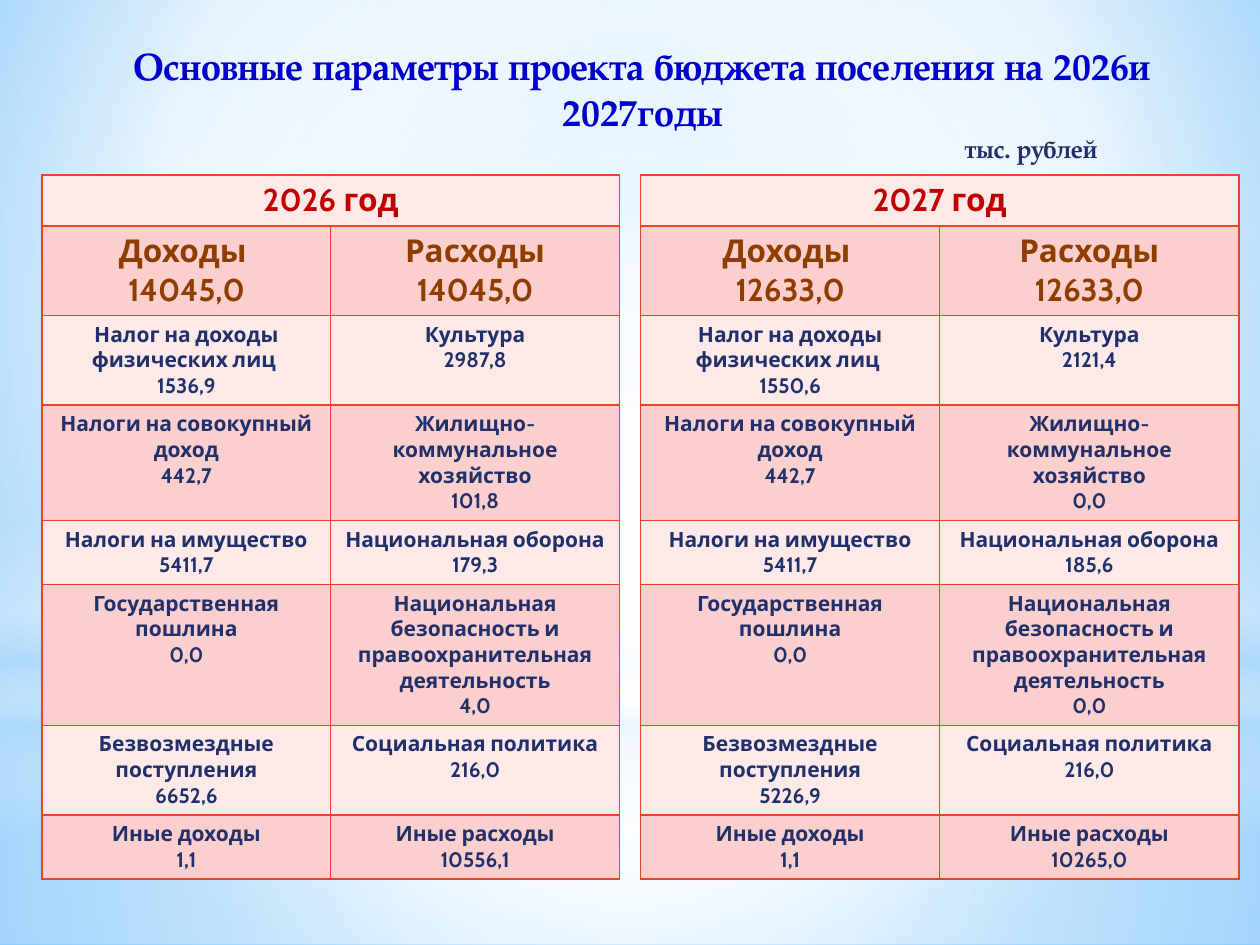
from lxml import etree
from pptx import Presentation
from pptx.dml.color import RGBColor
from pptx.enum.shapes import MSO_SHAPE
from pptx.enum.text import MSO_ANCHOR, MSO_AUTO_SIZE, PP_ALIGN
from pptx.oxml.ns import qn
from pptx.util import Pt

RECTANGLE, ELLIPSE = MSO_SHAPE.RECTANGLE, MSO_SHAPE.OVAL
CENTER, LEFT = PP_ALIGN.CENTER, PP_ALIGN.LEFT
TOP, NO_FIT = MSO_ANCHOR.TOP, MSO_AUTO_SIZE.NONE

WHITE = RGBColor(0xFF, 0xFF, 0xFF)
SKY = RGBColor(0xB4, 0xDC, 0xFA)
BACK_LIGHT = RGBColor(0x9E, 0xD5, 0xFF)
BACK_DEEP = RGBColor(0x5B, 0xB9, 0xFF)
TITLE_BLUE = RGBColor(0x00, 0x00, 0xCC)
TITLE_EDGE = RGBColor(0x44, 0x5E, 0xC3)
NAVY = RGBColor(0x21, 0x30, 0x6A)
RED = RGBColor(0xC0, 0x00, 0x00)
BROWN = RGBColor(0x90, 0x3E, 0x00)
BORDER = RGBColor(0xF1, 0x41, 0x24)
BANDS = (RGBColor(0xFC, 0xE9, 0xE8), RGBColor(0xFA, 0xCF, 0xCD))

# Budget items: income label, expense label
ITEMS = [
    ("Доходы ", "Расходы"),
    ("Налог на доходы физических лиц ", "Культура"),
    ("Налоги на совокупный доход", "Жилищно-коммунальное хозяйство"),
    ("Налоги на имущество", "Национальная оборона"),
    ("Государственная пошлина",
     "Национальная безопасность и правоохранительная деятельность"),
    ("Безвозмездные поступления", "Социальная политика"),
    ("Иные доходы", "Иные расходы"),
]
AMOUNTS_2026 = [
    ("14045,0", "14045,0"), ("1536,9", "2987,8"), ("442,7", "101,8"),
    ("5411,7", "179,3"), ("0,0", "4,0"), ("6652,6", "216,0"), ("1,1", "10556,1"),
]
AMOUNTS_2027 = [
    ("12633,0", "12633,0"), ("1550,6", "2121,4"), ("442,7", "0,0"),
    ("5411,7", "185,6"), ("0,0", "0,0"), ("5226,9", "216,0"), ("1,1", "10265,0"),
]


def solid_line(parent, tag, color, width):
    line = etree.Element(qn(tag), w=str(Pt(width)))
    fill = etree.SubElement(line, qn("a:solidFill"))
    etree.SubElement(fill, qn("a:srgbClr"), val=str(color))
    return line


def set_gradient(properties, stops, focus=None):
    """Replace a solid fill by stops of (position, colour, opacity), in percent."""
    gradient = etree.Element(qn("a:gradFill"), rotWithShape="1")
    stop_list = etree.SubElement(gradient, qn("a:gsLst"))
    for position, color, opacity in stops:
        stop = etree.SubElement(stop_list, qn("a:gs"), pos=str(position * 1000))
        tint = etree.SubElement(stop, qn("a:srgbClr"), val=str(color))
        if opacity < 100:
            etree.SubElement(tint, qn("a:alpha"), val=str(opacity * 1000))
    if focus:
        path = etree.SubElement(gradient, qn("a:path"), path="circle")
        sides = {side: str(value * 1000) for side, value in zip("ltrb", focus)}
        etree.SubElement(path, qn("a:fillToRect"), **sides)
    else:
        etree.SubElement(gradient, qn("a:lin"), ang="5400000", scaled="0")
    properties.replace(properties.find(qn("a:solidFill")), gradient)


class BudgetSlide:
    title_font = "TeX Gyre Pagella"
    table_font = "Cabin"
    center_focus = (50, 50, 50, 50)

    def __init__(self, presentation):
        self.slide = presentation.slides.add_slide(presentation.slide_layouts[5])

    def background(self, stops, focus):
        self.slide.background.fill.solid()
        set_gradient(self.slide.element.find(".//" + qn("p:bgPr")), stops, focus)

    def glow(self, kind, top, height, stops, focus=center_focus):
        shape = self.slide.shapes.add_shape(kind, 0, Pt(top), Pt(720), Pt(height))
        shape.shadow.inherit = False
        shape.fill.solid()
        shape.line.fill.background()
        set_gradient(shape.element.spPr, stops, focus)

    def style(self, paragraph, font_name, size, color, alignment=CENTER, outline=None):
        paragraph.alignment = alignment
        font = paragraph.font
        font.name, font.size, font.bold = font_name, Pt(size), True
        font.color.rgb = color
        if outline:
            defaults = paragraph._p.pPr.find(qn("a:defRPr"))
            defaults.insert(0, solid_line(defaults, "a:ln", *outline))

    def title(self, text, unit, unit_indent):
        title = self.slide.shapes.title
        title.left, title.top, title.width, title.height = Pt(25), Pt(21), Pt(684), Pt(45)
        frame = title.text_frame
        frame.word_wrap, frame.auto_size, frame.vertical_anchor = True, NO_FIT, TOP
        frame.text = f"{text}\n{unit}"
        heading, note = frame.paragraphs
        self.style(heading, self.title_font, 21.6, TITLE_BLUE, outline=(TITLE_EDGE, 0.83))
        self.style(note, self.title_font, 14.4, NAVY, LEFT)
        note._p.pPr.set("marL", str(Pt(unit_indent)))
        note._p.pPr.set("indent", "0")
        for paragraph in frame.paragraphs:
            paragraph.space_before = paragraph.space_after = Pt(0)
            paragraph.line_spacing = 1.0
        # Bring the title in front of the glow shapes
        self.slide.shapes._spTree.append(title.element)

    def cell(self, cell, lines, size, color, fill, outline=None):
        cell.text = "\n".join(lines)
        for paragraph in cell.text_frame.paragraphs:
            self.style(paragraph, self.table_font, size, color, outline=outline)
        cell.fill.solid()
        cell.fill.fore_color.rgb = fill
        properties = cell._tc.tcPr
        for index, side in enumerate("LRTB"):
            properties.insert(index, solid_line(properties, f"a:ln{side}", BORDER, 1))

    def budget_table(self, left, column_width, year, amounts):
        frame = self.slide.shapes.add_table(
            len(ITEMS) + 1, 2, Pt(left), Pt(100), Pt(2 * column_width), Pt(381.6))
        table = frame.table
        table.first_row = table.horz_banding = False
        for column in table.columns:
            column.width = Pt(column_width)
        for index, row in enumerate(table.rows):
            row.height = Pt(29.5 if index else 12.2)
        frame.height = Pt(381.6)

        # Year heading across both columns
        table.cell(0, 0).merge(table.cell(0, 1))
        self.cell(table.cell(0, 0), [year], 18, RED, BANDS[0], (BROWN, 0.75))
        self.cell(table.cell(0, 1), [], 18, RED, BANDS[0])

        # Totals first, then the items
        for row, (labels, values) in enumerate(zip(ITEMS, amounts), start=1):
            size, color = (18, BROWN) if row == 1 else (12, NAVY)
            for column, lines in enumerate(zip(labels, values)):
                self.cell(table.cell(row, column), lines, size, color, BANDS[row % 2])


def main():
    presentation = Presentation()
    presentation.slide_width, presentation.slide_height = Pt(720), Pt(540)
    budget = BudgetSlide(presentation)

    # Backdrop
    budget.background(
        [(0, BACK_LIGHT, 100), (60, WHITE, 100), (100, BACK_DEEP, 100)], (20, 10, 20, 60))
    budget.glow(RECTANGLE, 402, 138, [(0, WHITE, 91), (37, WHITE, 76), (100, SKY, 79)])
    budget.glow(RECTANGLE, 0, 402, [(0, WHITE, 89), (48, WHITE, 62), (100, SKY, 79)])
    budget.glow(RECTANGLE, 297, 180, [
        (0, WHITE, 0), (29, WHITE, 30), (45, SKY, 40),
        (55, WHITE, 26), (65, SKY, 60), (100, WHITE, 0)], focus=None)
    budget.glow(ELLIPSE, 126, 402, [(0, WHITE, 100), (56, WHITE, 0)])

    # Title with the unit of measure
    budget.title("Основные параметры проекта бюджета поселения на 2026и 2027годы",
                 "тыс. рублей", 519)

    # One table per year
    budget.budget_table(24, 165, "2026 год", AMOUNTS_2026)
    budget.budget_table(366, 171, "2027 год", AMOUNTS_2027)

    presentation.save("out.pptx")


if __name__ == "__main__":
    main()
